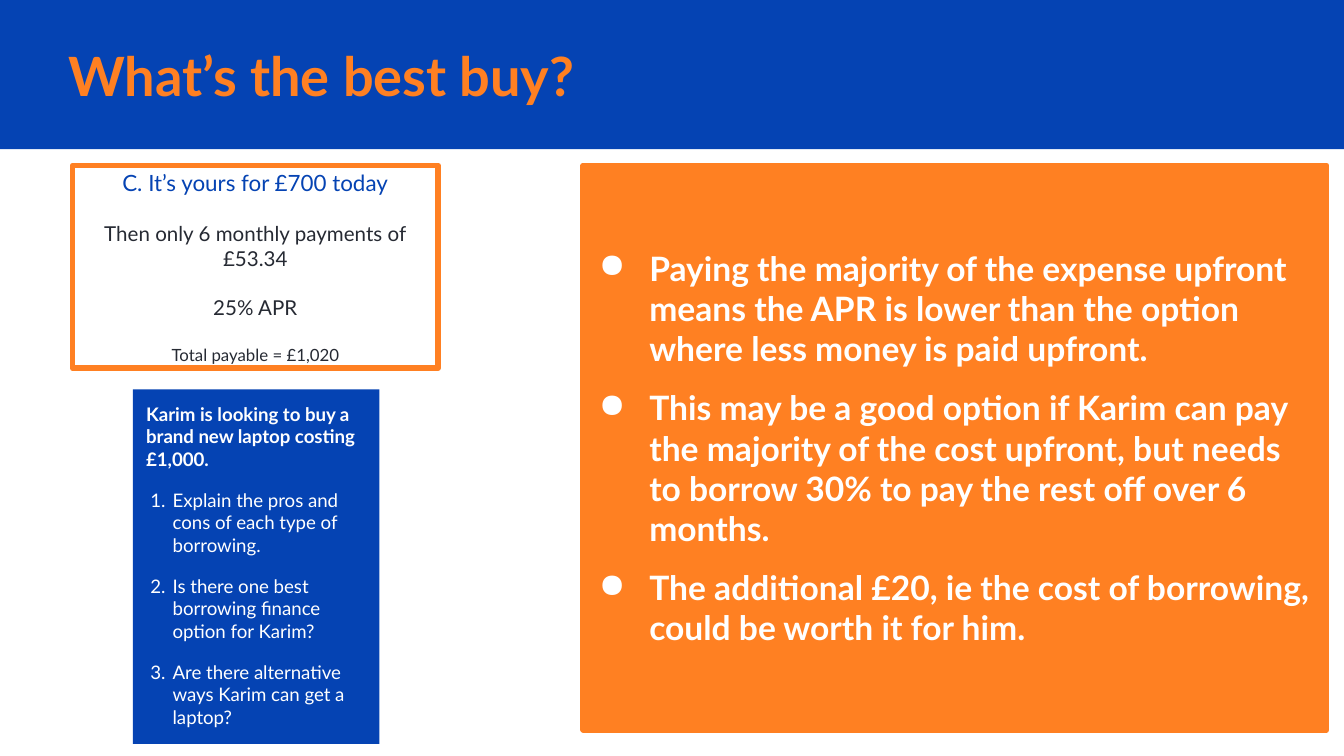
"""Build the "What's the best buy?" slide."""
from lxml import etree
from pptx import Presentation
from pptx import util as u
from pptx.dml.color import RGBColor
from pptx.enum import shapes, text
from pptx.oxml.ns import qn

COLORS = {"blue": "0543B3", "orange": "FF8022", "white": "FFFFFF", "ink": "262A33"}


def rgb(name):
    return RGBColor.from_string(COLORS[name])


def add_text(p, content, size, color, bold=False, align="LEFT", before=0, after=0,
             bullet=None, left=0, hang=0):
    pPr = p._p.get_or_add_pPr()
    if bullet:
        pPr.set("marL", str(u.Pt(left)))
        pPr.set("indent", str(-u.Pt(hang)))
        clr = etree.SubElement(pPr, qn("a:buClr"))
        etree.SubElement(clr, qn("a:srgbClr"), val=COLORS[color])
        if bullet == "number":
            etree.SubElement(pPr, qn("a:buAutoNum"), type="arabicPeriod")
        else:
            etree.SubElement(pPr, qn("a:buChar"), char=bullet)
    p.alignment = getattr(text.PP_ALIGN, align)
    p.space_before, p.space_after = u.Pt(before), u.Pt(after)
    r = p.add_run()
    r.text = content
    r.font.name, r.font.size, r.font.bold = "Lato", u.Pt(size), bold
    r.font.color.rgb = rgb(color)


class Deck:
    def __init__(self, width, height, inset):
        self.prs = Presentation()
        self.prs.slide_width, self.prs.slide_height = u.Pt(width), u.Pt(height)
        self.s = self.prs.slides.add_slide(self.prs.slide_layouts[6])
        self.inset = u.Pt(inset)

    def box(self, at, fill, line=None):
        sp = self.s.shapes.add_shape(shapes.MSO_SHAPE.RECTANGLE, *map(u.Pt, at))
        sp.shadow.inherit = False
        sp.fill.solid()
        sp.fill.fore_color.rgb = rgb(fill)
        if line:
            sp.line.color.rgb = rgb(line)
            sp.line.width = u.Pt(3)
            etree.SubElement(sp._element.spPr.get_or_add_ln(), qn("a:round"))
        else:
            sp.line.fill.background()
        return sp

    def label(self, at):
        return self.s.shapes.add_textbox(*map(u.Pt, at))

    def put_text(self, sp, paragraphs, anchor="MIDDLE"):
        tf = sp.text_frame
        tf.word_wrap = True
        tf.vertical_anchor = getattr(text.MSO_ANCHOR, anchor)
        tf.margin_left = tf.margin_right = self.inset
        tf.margin_top = tf.margin_bottom = self.inset
        for i, (content, fmt) in enumerate(paragraphs):
            p = tf.add_paragraph() if i else tf.paragraphs[0]
            add_text(p, content, **fmt)


def main():
    deck = Deck(720, 405, 7.2)
    deck.box((0, 0, 720, 80), "blue")
    title = deck.label((29.5, 20.2, 564, 40.3))
    deck.put_text(title, [("What’s the best buy?", dict(size=29, color="orange", bold=True))])

    offer = deck.box((38.9, 88.6, 195.8, 108.7), "white", "orange")
    lines = [
        ("C. It’s yours for £700 today", 12, "blue"),
        ("Then only 6 monthly payments of £53.34", 11, "ink"),
        ("25% APR", 11, "ink"),
        ("Total payable = £1,020", 9, "ink"),
    ]
    deck.put_text(offer, [
        (line, dict(size=size, color=color, align="CENTER", before=13.2 if i else 0))
        for i, (line, size, color) in enumerate(lines)])

    answer = deck.box((312.5, 88.6, 398.2, 302.4), "orange", "orange")
    points = [
        "Paying the majority of the expense upfront means the APR is lower than the option "
        "where less money is paid upfront.",
        "This may be a good option if Karim can pay the majority of the cost upfront, but "
        "needs to borrow 30% to pay the rest off over 6 months.",
        "The additional £20, ie the cost of borrowing, could be worth it for him.",
    ]
    deck.put_text(answer, [
        (point, dict(size=18, color="white", bold=True, bullet="●", left=28.3, hang=27,
                     before=10 if i else 0, after=0 if i < 2 else 10))
        for i, point in enumerate(points)])

    task = deck.box((71.2, 208.6, 132, 190), "blue")
    intro = "Karim is looking to buy a brand new laptop costing £1,000."
    questions = [
        "Explain the pros and cons of each type of borrowing.",
        "Is there one best borrowing finance option for Karim?",
        "Are there alternative ways Karim can get a laptop?",
    ]
    deck.put_text(task, [(intro, dict(size=10, color="white", bold=True))] + [
        (question, dict(size=10, color="white", bullet="number", left=14.2, hang=12,
                        before=10, after=0 if i < 2 else 10))
        for i, question in enumerate(questions)], anchor="TOP")

    deck.prs.save("out.pptx")


if __name__ == "__main__":
    main()
